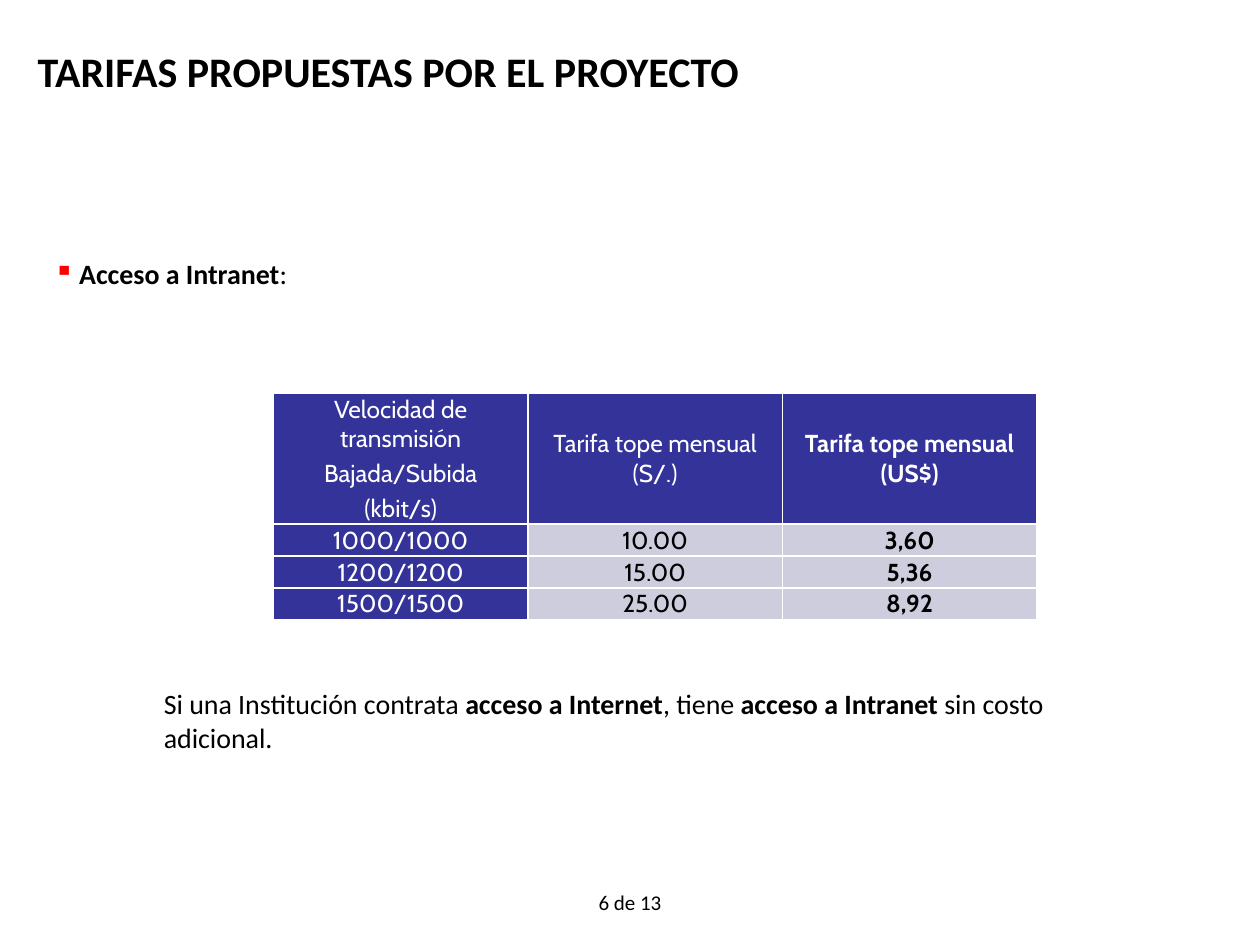
import dataclasses

import lxml.etree
import pptx
import pptx.dml.color
import pptx.enum.text
import pptx.oxml
import pptx.oxml.ns
import pptx.slide
import pptx.table
import pptx.text.text
import pptx.util

Inches = pptx.util.Inches
Pt = pptx.util.Pt
Align = pptx.enum.text.PP_ALIGN
Anchor = pptx.enum.text.MSO_ANCHOR

COLORS = {
    "text": "000000",
    "white": "FFFFFF",
    "header": "333399",
    "value": "CDCDDE",
    "bullet": "FF0000",
}


@dataclasses.dataclass(frozen=True)
class Span:
    text: str
    bold: bool = False


@dataclasses.dataclass(frozen=True)
class TextBlock:
    left: float
    top: float
    width: float
    height: float
    size: int
    spans: tuple[Span, ...]
    align: Align = Align.LEFT
    anchor: Anchor = Anchor.TOP
    margin_left: float = 0.1
    margin_right: float = 0.1
    bullet: str = ""


BLOCKS = (
    TextBlock(0.33, 1.99, 9.33, 4.9, 16,
              (Span("Acceso a Intranet", True), Span(": ")),
              align=Align.JUSTIFY, margin_right=0.16, bullet="▪"),
    TextBlock(0.2, 0.13, 6.11, 0.86, 24,
              (Span("TARIFAS PROPUESTAS POR EL PROYECTO", True),),
              anchor=Anchor.MIDDLE),
    TextBlock(4.57, 7.01, 0.86, 0.39, 12, (Span("6 de 13"),), align=Align.CENTER),
    TextBlock(1.1, 5.4, 7.36, 0.64, 16,
              (Span("Si una Institución contrata "), Span("acceso a Internet", True),
               Span(", tiene "), Span("acceso a Intranet", True),
               Span(" sin costo adicional.")),
              margin_left=0.2),
)

TARIFFS = (
    ("Velocidad de transmisión\nBajada/Subida\n(kbit/s)",
     "Tarifa tope mensual (S/.)", "Tarifa tope mensual (US$)"),
    ("1000/1000", "10.00", "3,60"),
    ("1200/1200", "15.00", "5,36"),
    ("1500/1500", "25.00", "8,92"),
)
ROW_HEIGHTS = (1.04, 0.25, 0.25, 0.25)
COLUMN_WIDTH = 2.02


def rgb(name: str) -> pptx.dml.color.RGBColor:
    return pptx.dml.color.RGBColor.from_string(COLORS[name])


def set_font(font: pptx.text.text.Font, name: str, size: int, color: str, bold: bool) -> None:
    font.name = name
    font.size = Pt(size)
    font.bold = bold
    font.color.rgb = rgb(color)


def add_bullet(para, symbol: str) -> None:
    properties = para._p.get_or_add_pPr()
    properties.set("marL", str(Inches(0.2)))
    properties.set("indent", str(-Inches(0.2)))
    color = lxml.etree.SubElement(properties, pptx.oxml.ns.qn("a:buClr"))
    lxml.etree.SubElement(color, pptx.oxml.ns.qn("a:srgbClr"), val=COLORS["bullet"])
    lxml.etree.SubElement(properties, pptx.oxml.ns.qn("a:buChar"), char=symbol)


def add_text(page: pptx.slide.Slide, block: TextBlock) -> None:
    box = page.shapes.add_textbox(Inches(block.left), Inches(block.top),
                                  Inches(block.width), Inches(block.height))
    frame = box.text_frame
    frame.word_wrap = True
    frame.vertical_anchor = block.anchor
    frame.margin_left = Inches(block.margin_left)
    frame.margin_right = Inches(block.margin_right)
    para = frame.paragraphs[0]
    para.alignment = block.align
    if block.bullet:
        add_bullet(para, block.bullet)
    for span in block.spans:
        run = para.add_run()
        run.text = span.text
        set_font(run.font, "Calibri", block.size, "text", span.bold)


def add_borders(cell: pptx.table._Cell) -> None:
    properties = cell._tc.get_or_add_tcPr()
    for side in ("lnL", "lnR", "lnT", "lnB"):
        line = lxml.etree.SubElement(properties, pptx.oxml.ns.qn(f"a:{side}"), w=str(Pt(1)))
        fill = lxml.etree.SubElement(line, pptx.oxml.ns.qn("a:solidFill"))
        lxml.etree.SubElement(fill, pptx.oxml.ns.qn("a:srgbClr"), val=COLORS["white"])


def fill_cell(cell: pptx.table._Cell, text: str, heading: bool, bold: bool) -> None:
    add_borders(cell)
    cell.fill.solid()
    cell.fill.fore_color.rgb = rgb("header" if heading else "value")
    cell.vertical_anchor = Anchor.MIDDLE
    cell.margin_left = cell.margin_right = Inches(0.01)
    cell.margin_top = cell.margin_bottom = Inches(0.01)
    cell.text_frame.text = text
    for index, para in enumerate(cell.text_frame.paragraphs):
        para.alignment = Align.CENTER
        if index:
            para.space_before = Pt(2.8)
        for run in para.runs:
            set_font(run.font, "Cabin", 14, "white" if heading else "text", bold)


def add_tariff_table(page: pptx.slide.Slide) -> None:
    columns = len(TARIFFS[0])
    table = page.shapes.add_table(len(TARIFFS), columns, Inches(2.17), Inches(3.12),
                                  Inches(COLUMN_WIDTH * columns),
                                  Inches(sum(ROW_HEIGHTS))).table
    table.first_row = False
    table.horz_banding = False
    for column in table.columns:
        column.width = Inches(COLUMN_WIDTH)
    for row, height in zip(table.rows, ROW_HEIGHTS):
        row.height = Inches(height)
    for row, values in enumerate(TARIFFS):
        for column, value in enumerate(values):
            fill_cell(table.cell(row, column), value,
                      heading=row == 0 or column == 0, bold=column == columns - 1)


def main() -> None:
    deck = pptx.Presentation()
    deck.slide_width = Inches(10)
    deck.slide_height = Inches(7.5)
    page = deck.slides.add_slide(deck.slide_layouts[6])
    for block in BLOCKS:
        add_text(page, block)
    add_tariff_table(page)
    deck.save("out.pptx")


if __name__ == "__main__":
    main()
